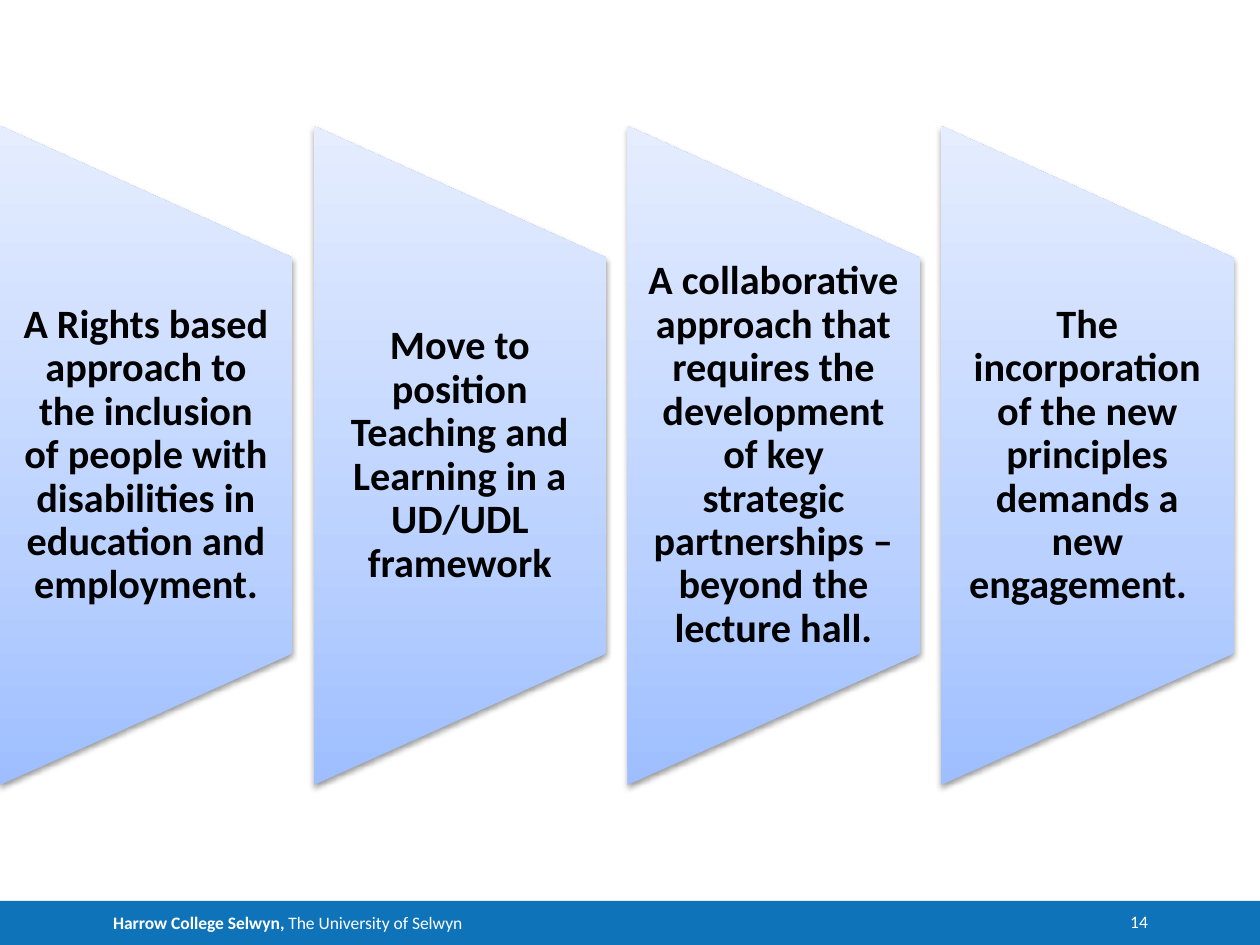
import pptx
import pptx.util
import pptx.dml.color
import pptx.enum.shapes
import pptx.enum.text
import pptx.oxml
import pptx.oxml.ns

Inches = pptx.util.Inches
Pt = pptx.util.Pt
SHAPES = pptx.enum.shapes.MSO_SHAPE
ALIGN = pptx.enum.text.PP_ALIGN
ANCHOR = pptx.enum.text.MSO_ANCHOR

COLORS = {"footer": "0E73B9", "white": "FFFFFF", "black": "000000",
          "deep": "9EBEFF", "middle": "BAD1FF", "pale": "E5EDFF"}
GRADIENT = [(0, "deep"), (35, "middle"), (100, "pale")]
FONT = "Calibri"
PANEL_WIDTH, PANEL_HEIGHT, PANEL_STEP = 2.32, 5.23, 2.49
PANELS = [
    "A Rights based approach to the inclusion of people with disabilities "
    "in education and employment.",
    "Move to position Teaching and Learning in a UD/UDL framework",
    "A collaborative approach that requires the development of key strategic "
    "partnerships – beyond the lecture hall.",
    "The incorporation of the new principles demands a new engagement.  ",
]


def color(name):
    return pptx.dml.color.RGBColor.from_string(COLORS[name])


def style_font(font, size, name, bold=False):
    font.name, font.size, font.bold = FONT, Pt(size), bold
    font.color.rgb = color(name)


def set_frame(frame, inset, anchor):
    """Wrap the text, with side insets in inches and none above or below."""
    frame.word_wrap = True
    frame.margin_left = frame.margin_right = Inches(inset)
    frame.margin_top = frame.margin_bottom = 0
    frame.vertical_anchor = anchor


def shade_panel(shape):
    """Give a turned shape an upright gradient and a soft shadow below."""
    namespace = pptx.oxml.ns.nsdecls("a")
    stops = "".join(
        f'<a:gs pos="{place * 1000}"><a:srgbClr val="{COLORS[name]}"/></a:gs>'
        for place, name in GRADIENT)
    gradient = pptx.oxml.parse_xml(
        f'<a:gradFill {namespace} rotWithShape="0"><a:gsLst>{stops}</a:gsLst>'
        '<a:lin ang="16200000" scaled="0"/></a:gradFill>')
    shadow = pptx.oxml.parse_xml(
        f'<a:effectLst {namespace}><a:outerShdw blurRad="{Pt(3.1)}" '
        f'dist="{Pt(1.6)}" dir="5400000" rotWithShape="0">'
        f'<a:srgbClr val="{COLORS["black"]}"><a:alpha val="38000"/></a:srgbClr>'
        '</a:outerShdw></a:effectLst>')
    shape.line.fill.background()
    properties = shape._element.spPr
    properties.find(pptx.oxml.ns.qn("a:prstGeom")).addnext(gradient)
    properties.append(shadow)


def add_panel(page, left, top, width, height, text):
    """Add a sideways trapezoid filling the box, with text in its middle."""
    turn = (height - width) / 2
    shape = page.shapes.add_shape(
        SHAPES.FLOWCHART_MANUAL_OPERATION, Inches(left - turn),
        Inches(top + turn), Inches(height), Inches(width))
    shape.rotation = 270
    shade_panel(shape)

    label = page.shapes.add_textbox(
        Inches(left), Inches(top + height * 0.2),
        Inches(width), Inches(height * 0.6))
    set_frame(label.text_frame, 0.16, ANCHOR.MIDDLE)
    para = label.text_frame.paragraphs[0]
    para.text = text
    para.alignment = ALIGN.CENTER
    para.line_spacing = 0.9
    style_font(para.font, 23, "black", bold=True)


def add_footer(page, left, top, width, height):
    bar = page.shapes.add_shape(SHAPES.RECTANGLE, Inches(left), Inches(top),
                                Inches(width), Inches(height))
    bar.shadow.inherit = False
    bar.fill.solid()
    bar.fill.fore_color.rgb = color("footer")
    bar.line.fill.background()
    set_frame(bar.text_frame, 0.1, ANCHOR.MIDDLE)
    para = bar.text_frame.paragraphs[0]
    para.alignment = ALIGN.LEFT
    para._p.get_or_add_pPr().set("marL", str(Inches(0.8)))
    for text, bold in [("Harrow College Selwyn, ", True),
                       ("The University of Selwyn", False)]:
        span = para.add_run()
        span.text = text
        style_font(span.font, 10, "white", bold)

    number = page.shapes.add_textbox(Inches(left + 8.7), Inches(top + 0.08),
                                     Inches(0.41), Inches(0.17))
    set_frame(number.text_frame, 0, ANCHOR.TOP)
    para = number.text_frame.paragraphs[0]
    para.text = "14"
    para.alignment = ALIGN.RIGHT
    style_font(para.font, 10, "white")


def main():
    deck = pptx.Presentation()
    deck.slide_width, deck.slide_height = Inches(10), Inches(7.5)
    page = deck.slides.add_slide(deck.slide_layouts.get_by_name("Blank"))
    add_footer(page, 0, 7.15, 10, 0.35)
    for index, text in enumerate(PANELS):
        add_panel(page, index * PANEL_STEP, 1, PANEL_WIDTH, PANEL_HEIGHT, text)
    deck.save("out.pptx")


if __name__ == "__main__":
    main()
